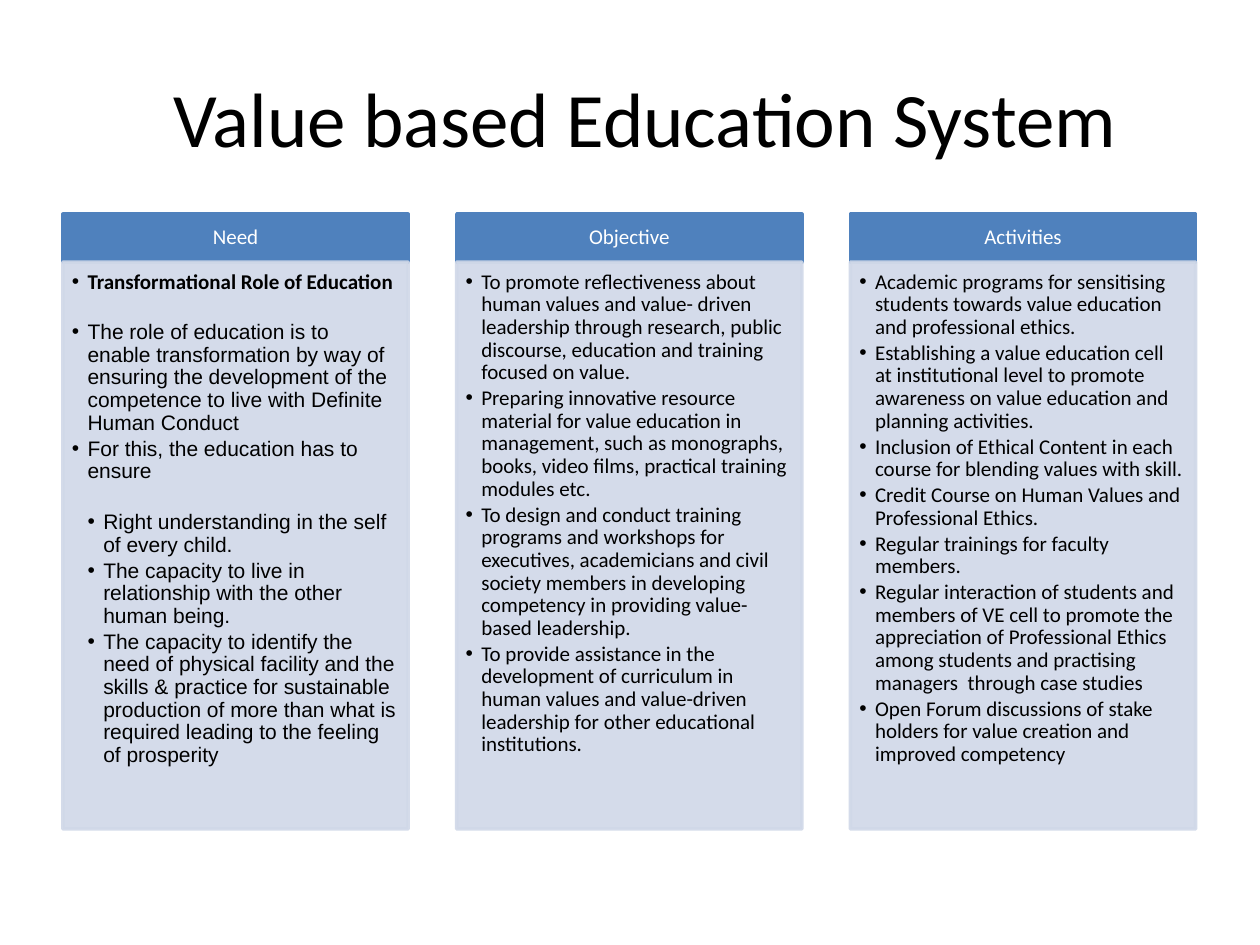
from lxml import etree
from pptx import Presentation
from pptx.dml.color import RGBColor
from pptx.enum.shapes import MSO_SHAPE
from pptx.enum.text import MSO_ANCHOR, PP_ALIGN
from pptx.oxml.ns import qn
from pptx.util import Inches, Pt

RECTANGLE = MSO_SHAPE.RECTANGLE
TOP, MIDDLE = MSO_ANCHOR.TOP, MSO_ANCHOR.MIDDLE
LEFT, CENTER = PP_ALIGN.LEFT, PP_ALIGN.CENTER

BLUE = RGBColor(0x4F, 0x81, 0xBD)
PALE_BLUE = RGBColor(0xD0, 0xD8, 0xE8)
BLACK = RGBColor(0, 0, 0)
WHITE = RGBColor(0xFF, 0xFF, 0xFF)

TITLE_ONLY = 5
HEADER_HEIGHT = 0.38
COLUMN_WIDTH = 2.74
COLUMN_STEP = 3.125
INDENT = 0.125
ITEM_GAP = 1.8
SECTION_GAP = 16


def item(text, level=1, font="Calibri", bold=False, gap=ITEM_GAP):
    """Describe one bulleted paragraph."""
    return {"text": text, "level": level, "font": font, "bold": bold, "gap": gap}


NEED = [
    item("Transformational Role of Education", bold=True, gap=SECTION_GAP),
    item("The role of education is to enable transformation by way of ensuring the "
         "development of the competence to live with Definite Human Conduct", font="Arial"),
    item("For this, the education has to ensure", font="Arial", gap=SECTION_GAP),
    item("Right understanding in the self of every child.", 2, "Arial"),
    item("The capacity to live in relationship with the other human being.", 2, "Arial"),
    item("The capacity to identify the need of physical facility and the skills & practice "
         "for sustainable production of more than what is required leading to the feeling "
         "of prosperity", 2, "Arial"),
]
OBJECTIVE = [
    item("To promote reflectiveness about human values and value- driven leadership through "
         "research, public discourse, education and training focused on value."),
    item("Preparing innovative resource material for value education in management, such as "
         "monographs, books, video films, practical training modules etc."),
    item("To design and conduct training programs and workshops for executives, academicians "
         "and civil society members in developing competency in providing value-based "
         "leadership."),
    item("To provide assistance in the development of curriculum in human values and "
         "value-driven leadership for other educational institutions."),
]
ACTIVITIES = [
    item("Academic programs for sensitising students towards value education and "
         "professional ethics."),
    item("Establishing a value education cell at institutional level to promote awareness "
         "on value education and planning activities."),
    item("Inclusion of Ethical Content in each course for blending values with skill."),
    item("Credit Course on Human Values and Professional Ethics."),
    item("Regular trainings for faculty members."),
    item("Regular interaction of students and members of VE cell to promote the appreciation "
         "of Professional Ethics among students and practising managers  through case studies"),
    item("Open Forum discussions of stake holders for value creation and improved competency"),
]
COLUMNS = [("Need", NEED), ("Objective", OBJECTIVE), ("Activities", ACTIVITIES)]


def add_span(para, text, size, color, font="Calibri", bold=False):
    """Add one formatted run to a paragraph."""
    span = para.add_run()
    span.text = text
    span.font.name = font
    span.font.size = Pt(size)
    span.font.bold = bold
    span.font.color.rgb = color


def set_insets(frame, left, top, right, bottom):
    """Set the four text margins of a frame in inches."""
    frame.margin_left, frame.margin_top = Inches(left), Inches(top)
    frame.margin_right, frame.margin_bottom = Inches(right), Inches(bottom)


def add_panel(page, left, top, width, height, color, anchor, insets):
    """Add a filled rectangle and return it."""
    box = page.shapes.add_shape(
        RECTANGLE, Inches(left), Inches(top), Inches(width), Inches(height))
    box.shadow.inherit = False
    box.fill.solid()
    box.fill.fore_color.rgb = color
    box.line.color.rgb = color
    box.line.width = Pt(2)
    box.text_frame.word_wrap = True
    box.text_frame.vertical_anchor = anchor
    set_insets(box.text_frame, *insets)
    return box


def make_translucent(box, percent):
    """Set the opacity of a panel's fill and line."""
    for color in box._element.spPr.iter(qn("a:srgbClr")):
        etree.SubElement(color, qn("a:alpha"), val=str(percent * 1000))


def format_bullet(para, level):
    """Give a paragraph a hanging bullet at its level."""
    para.level = level
    properties = para._p.get_or_add_pPr()
    properties.set("marL", str(Inches(INDENT * level)))
    properties.set("indent", str(Inches(-INDENT)))
    etree.SubElement(properties, qn("a:buFont"), typeface="Arial")
    etree.SubElement(properties, qn("a:buChar"), char="•")


def add_title(page, left, top, width, height):
    """Place and fill the title placeholder."""
    title = page.shapes.title
    title.left, title.top = Inches(left), Inches(top)
    title.width, title.height = Inches(width), Inches(height)
    frame = title.text_frame
    frame.vertical_anchor = MIDDLE
    set_insets(frame, 0.34, 0.05, 0.1, 0.05)
    para = frame.paragraphs[0]
    para.alignment = CENTER
    add_span(para, "Value based Education System", 44, BLACK)


def add_column(page, left, top, width, height, heading, items):
    """Add a heading panel with a bulleted panel below it."""
    header = add_panel(page, left, top, width, HEADER_HEIGHT, BLUE, MIDDLE,
                       (0.09, 0.05, 0.09, 0.05))
    para = header.text_frame.paragraphs[0]
    para.alignment = CENTER
    para.line_spacing = 0.9
    add_span(para, heading, 12, WHITE)

    body = add_panel(page, left, top + HEADER_HEIGHT, width, height - HEADER_HEIGHT,
                     PALE_BLUE, TOP, (0.07, 0.07, 0.09, 0.1))
    make_translucent(body, 90)
    frame = body.text_frame
    for index, entry in enumerate(items):
        para = frame.add_paragraph() if index else frame.paragraphs[0]
        para.alignment = LEFT
        para.line_spacing = 0.9
        para.space_after = Pt(entry["gap"])
        format_bullet(para, entry["level"])
        add_span(para, entry["text"], 12, BLACK, entry["font"], entry["bold"])


def main():
    """Build and save the deck."""
    deck = Presentation()
    deck.slide_width, deck.slide_height = Inches(10), Inches(7.5)
    page = deck.slides.add_slide(deck.slide_layouts[TITLE_ONLY])
    add_title(page, 0.5, 0.3, 9, 1.25)
    for index, (heading, items) in enumerate(COLUMNS):
        add_column(page, 0.5 + index * COLUMN_STEP, 1.7, COLUMN_WIDTH, 4.88, heading, items)
    deck.save("out.pptx")


if __name__ == "__main__":
    main()
